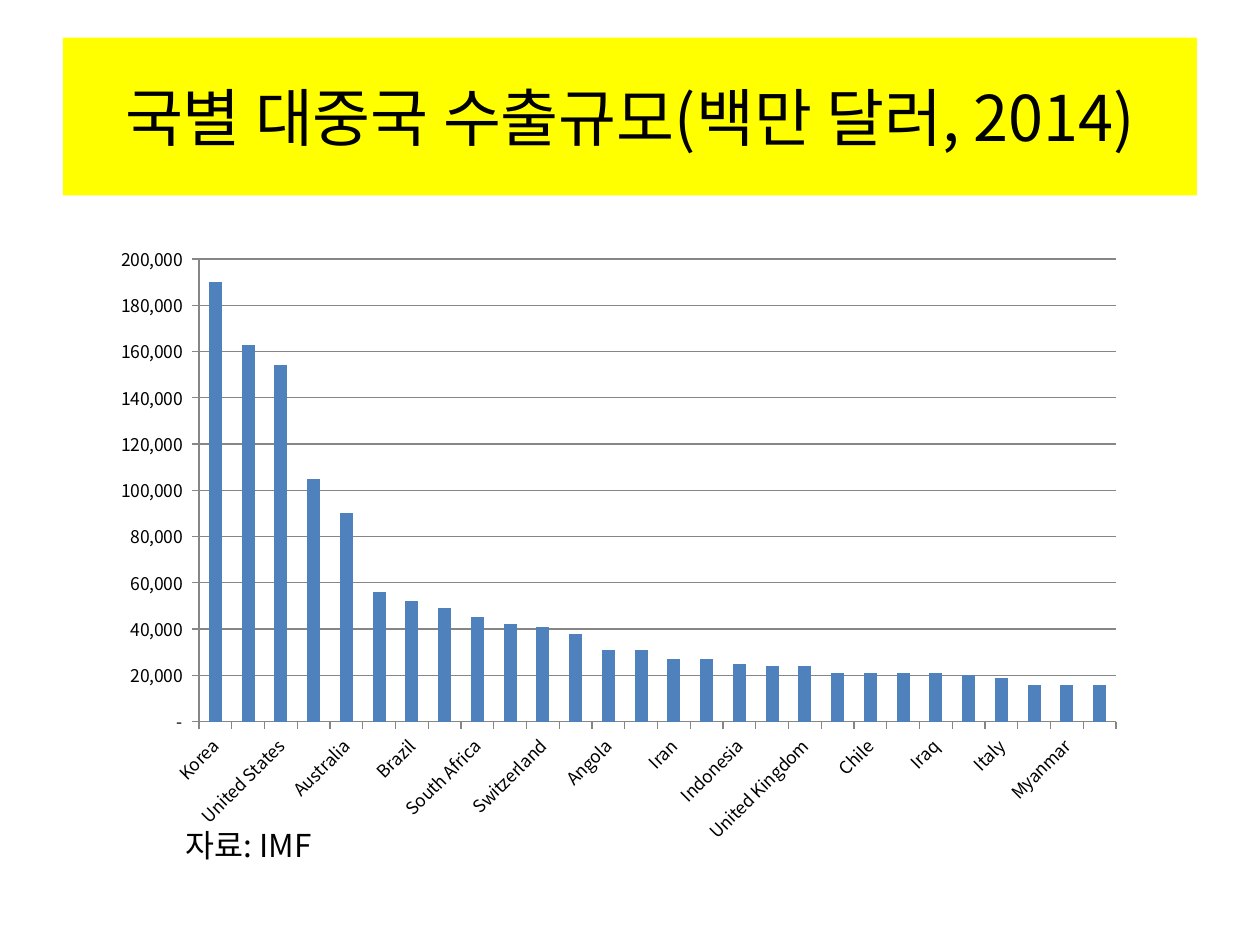
import pptx
import pptx.chart.data
import pptx.dml.color
import pptx.enum.chart
import pptx.enum.shapes
import pptx.enum.text
import pptx.oxml
import pptx.oxml.ns
import pptx.util
from pptx.util import Cm, Pt

FONT = "Noto Sans CJK KR"
COLOURS = {"banner": "FFFF00", "text": "000000", "bar": "4F81BD", "grid": "868686"}
EXPORTS = {
    "Korea": 190000, "Japan": 163000, "United States": 154000, "Germany": 105000,
    "Australia": 90000, "Malaysia": 56000, "Brazil": 52000, "Saudi Arabia": 49000,
    "South Africa": 45000, "Russia": 42000, "Switzerland": 41000, "Thailand": 38000,
    "Angola": 31000, "Singapore": 31000, "Iran": 27000, "France": 27000,
    "Indonesia": 25000, "Oman": 24000, "United Kingdom": 24000, "Canada": 21000,
    "Chile": 21000, "Philippines": 21000, "Iraq": 21000, "Vietnam": 20000,
    "Italy": 19000, "India": 16000, "Myanmar": 16000, "United Arab Emirates": 16000,
}
PLOT_AREA = {"x": 0.1, "y": 0.04, "w": 0.88, "h": 0.74}


def colour(name):
    return pptx.dml.color.RGBColor.from_string(COLOURS[name])


def add_span(para, text, size):
    """Add a run with the same font for Latin and Korean letters."""
    span = para.add_run()
    span.text = text
    span.font.name = FONT
    span.font.size = Pt(size)
    span.font.color.rgb = colour("text")
    korean = pptx.oxml.parse_xml(
        f'<a:ea {pptx.oxml.ns.nsdecls("a")} typeface="{FONT}"/>')
    span.font._element.find(pptx.oxml.ns.qn("a:latin")).addnext(korean)


deck = pptx.Presentation()
deck.slide_width = Cm(25.4)
deck.slide_height = Cm(19.05)
page = deck.slides.add_slide(deck.slide_layouts[6])

# Title banner
banner = page.shapes.add_shape(
    pptx.enum.shapes.MSO_SHAPE.RECTANGLE, Cm(1.27), Cm(0.76), Cm(22.86), Cm(3.18))
banner.shadow.inherit = False
banner.fill.solid()
banner.fill.fore_color.rgb = colour("banner")
banner.line.fill.background()
banner.text_frame.word_wrap = True
banner.text_frame.vertical_anchor = pptx.enum.text.MSO_ANCHOR.MIDDLE
para = banner.text_frame.paragraphs[0]
para.alignment = pptx.enum.text.PP_ALIGN.CENTER
add_span(para, "국별 대중국 수출규모(백만 달러, 2014)", 36)

# Column chart
chart_data = pptx.chart.data.CategoryChartData()
chart_data.categories = list(EXPORTS)
chart_data.add_series("Series 1", list(EXPORTS.values()))
chart = page.shapes.add_chart(
    pptx.enum.chart.XL_CHART_TYPE.COLUMN_CLUSTERED,
    Cm(1.91), Cm(4.72), Cm(21.01), Cm(12.6), chart_data).chart
chart.has_legend = False
chart.has_title = False
chart.font.name = FONT
chart.font.size = Pt(10)
chart.font.color.rgb = colour("text")

plot = chart.plots[0]
plot.gap_width = 150
plot.vary_by_categories = False
series = plot.series[0]
series.format.fill.solid()
series.format.fill.fore_color.rgb = colour("bar")

values = chart.value_axis
values.minimum_scale = 0
values.maximum_scale = 200000
values.major_unit = 20000
values.has_major_gridlines = True
values.tick_labels.number_format = r'_(* #,##0_);\(* #,##0\);_(* "-"_);_(@_)'
values.tick_labels.number_format_is_linked = False
for axis in (values, chart.category_axis):
    axis.major_tick_mark = pptx.enum.chart.XL_TICK_MARK.OUTSIDE
for lines in (values, chart.category_axis, values.major_gridlines):
    lines.format.line.color.rgb = colour("grid")
    lines.format.line.width = Pt(0.75)

# Slanted country names, every second one shown
chart.category_axis.tick_labels.font.size = Pt(10)
category_xml = chart.category_axis._element
category_xml.find(".//" + pptx.oxml.ns.qn("a:bodyPr")).set("rot", "-2700000")
label_skip = pptx.oxml.parse_xml(
    f'<c:tickLblSkip {pptx.oxml.ns.nsdecls("c")} val="2"/>')
category_xml.find(pptx.oxml.ns.qn("c:noMultiLvlLbl")).addprevious(label_skip)

# Fixed position of the plot inside the chart
plot_xml = chart._chartSpace.chart.plotArea
for old_layout in plot_xml.findall(pptx.oxml.ns.qn("c:layout")):
    plot_xml.remove(old_layout)
sides = "".join(f'<c:{side} val="{share}"/>' for side, share in PLOT_AREA.items())
plot_xml.insert(0, pptx.oxml.parse_xml(
    f'<c:layout {pptx.oxml.ns.nsdecls("c")}><c:manualLayout>'
    '<c:layoutTarget val="inner"/><c:xMode val="edge"/><c:yMode val="edge"/>'
    f'{sides}</c:manualLayout></c:layout>'))

# Data source
box = page.shapes.add_textbox(Cm(3.5), Cm(16.53), Cm(4.6), Cm(1.03))
box.text_frame.word_wrap = True
box.text_frame.auto_size = pptx.enum.text.MSO_AUTO_SIZE.SHAPE_TO_FIT_TEXT
add_span(box.text_frame.paragraphs[0], "자료: IMF", 18)

deck.save("out.pptx")
